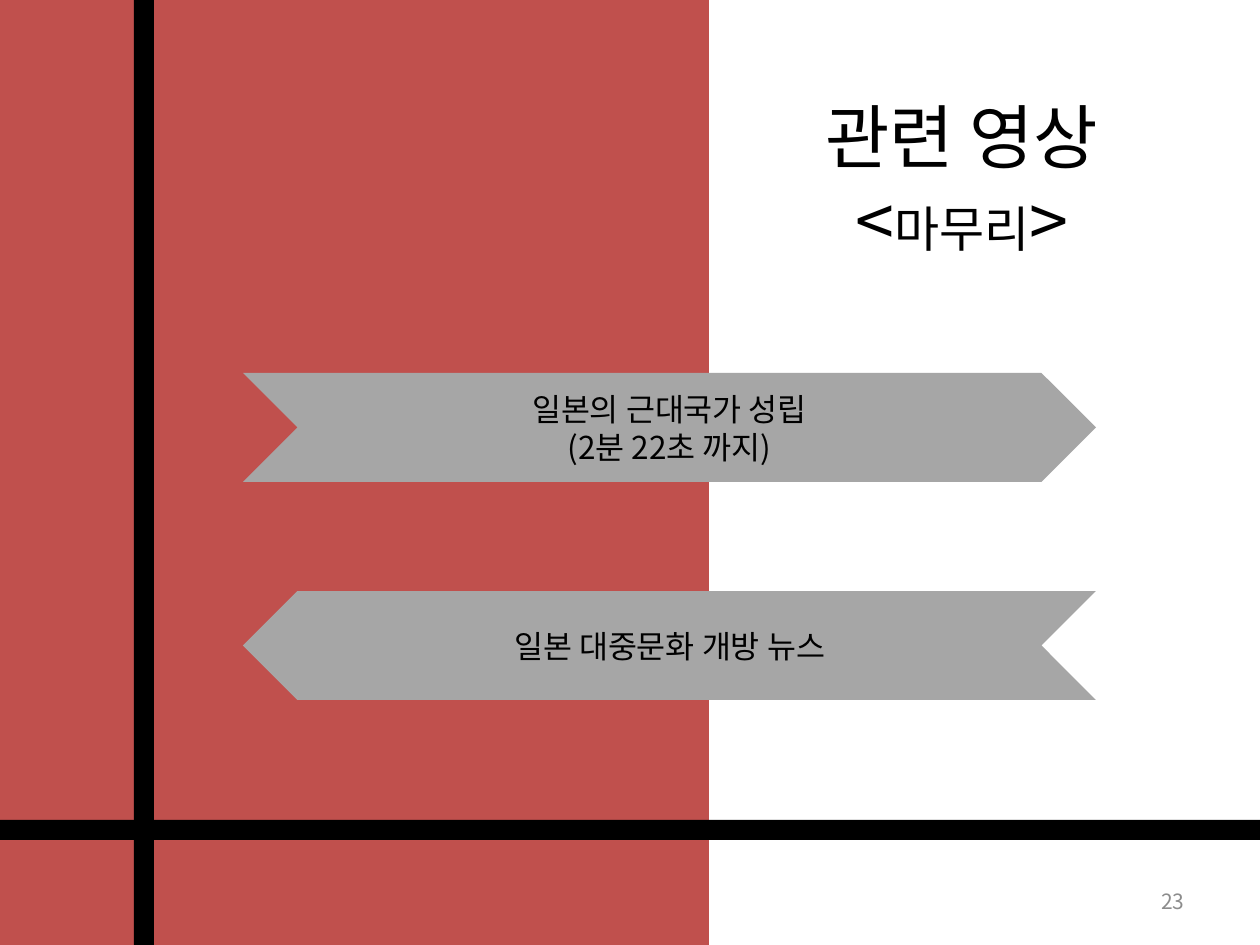
"""Build the slide that lists the closing videos."""
from dataclasses import dataclass

from pptx import Presentation
from pptx.dml.color import RGBColor
from pptx.enum.shapes import MSO_SHAPE
from pptx.enum.text import MSO_ANCHOR, MSO_AUTO_SIZE, PP_ALIGN
from pptx.oxml.ns import qn
from pptx.util import Emu, Pt

RECT, CHEVRON = MSO_SHAPE.RECTANGLE, MSO_SHAPE.CHEVRON
MIDDLE, TOP = MSO_ANCHOR.MIDDLE, MSO_ANCHOR.TOP
GROW, FIXED = MSO_AUTO_SIZE.SHAPE_TO_FIT_TEXT, MSO_AUTO_SIZE.NONE
LEFT, CENTER, RIGHT = PP_ALIGN.LEFT, PP_ALIGN.CENTER, PP_ALIGN.RIGHT
SCALE = 914400 / 126
WIDE, HIGH, BLEED, BAR = 1260, 945, 5, 20


@dataclass(frozen=True)
class Theme:
    """Hold the colours, font and type sizes."""
    font: str = "Noto Sans CJK KR"
    red: str = "C0504D"
    black: str = "000000"
    gray: str = "A6A6A6"
    pale: str = "8C8C8C"
    title: int = 40
    label: int = 28
    body: int = 18
    small: int = 12


THEME = Theme()


def px(count):
    """Turn pixels into EMU."""
    return Emu(round(count * SCALE))


def place(box):
    """Turn a pixel box into EMU lengths."""
    return [px(side) for side in box]


def write(frame, lines, size=THEME.body, color=THEME.black, align=CENTER,
          anchor=MIDDLE, wrap=True, fit=FIXED):
    """Fill a frame with lines, each a string or a list of sized runs."""
    frame.word_wrap = wrap
    frame.auto_size = fit
    frame.vertical_anchor = anchor
    aligns = align if isinstance(align, list) else [align] * len(lines)
    for index, (line, side) in enumerate(zip(lines, aligns)):
        para = frame.add_paragraph() if index else frame.paragraphs[0]
        para.alignment = side
        for words, points in [(line, size)] if isinstance(line, str) else line:
            run = para.add_run()
            run.text = words
            run.font.size = Pt(points)
            run.font.name = THEME.font
            run.font.color.rgb = RGBColor.from_string(color)
            latin = run.font._element.find(qn("a:latin"))
            asian = latin.makeelement(qn("a:ea"), {"typeface": THEME.font})
            latin.addnext(asian)


def block(slide, kind, box, color):
    """Add a plain filled shape."""
    shape = slide.shapes.add_shape(kind, *place(box))
    shape.shadow.inherit = False
    shape.fill.solid()
    shape.fill.fore_color.rgb = RGBColor.from_string(color)
    shape.line.fill.background()
    return shape


def arrow(slide, top, lines, flip=False):
    """Add a chevron with centred lines."""
    shape = block(slide, CHEVRON, (243, top, 853, 109), THEME.gray)
    if flip:
        shape._element.spPr.find(qn("a:xfrm")).set("flipH", "1")
    write(shape.text_frame, lines)


def label(slide, box, lines, **style):
    """Add a text box."""
    write(slide.shapes.add_textbox(*place(box)).text_frame, lines, **style)


def main():
    """Build and save the slide."""
    deck = Presentation()
    deck.slide_width, deck.slide_height = px(WIDE), px(HIGH)
    slide = deck.slides.add_slide(deck.slide_layouts[6])
    block(slide, RECT, (-BLEED, 0, 714, HIGH), THEME.red)
    block(slide, RECT, (134, 0, BAR, HIGH), THEME.black)
    block(slide, RECT, (-BLEED, 820, WIDE + BLEED, BAR), THEME.black)
    name = [("<", THEME.title), ("마무리", THEME.label), (">", THEME.title)]
    label(slide, (813, 87, 336, 183), ["관련 영상", name], size=THEME.title,
          align=[LEFT, CENTER], anchor=TOP, wrap=False, fit=GROW)
    arrow(slide, 373, ["일본의 근대국가 성립", "(2분 22초 까지)"])
    arrow(slide, 591, ["일본 대중문화 개방 뉴스"], flip=True)
    label(slide, (903, 876, 294, 50), ["23"], size=THEME.small,
          color=THEME.pale, align=RIGHT)
    deck.save("out.pptx")


if __name__ == "__main__":
    main()
